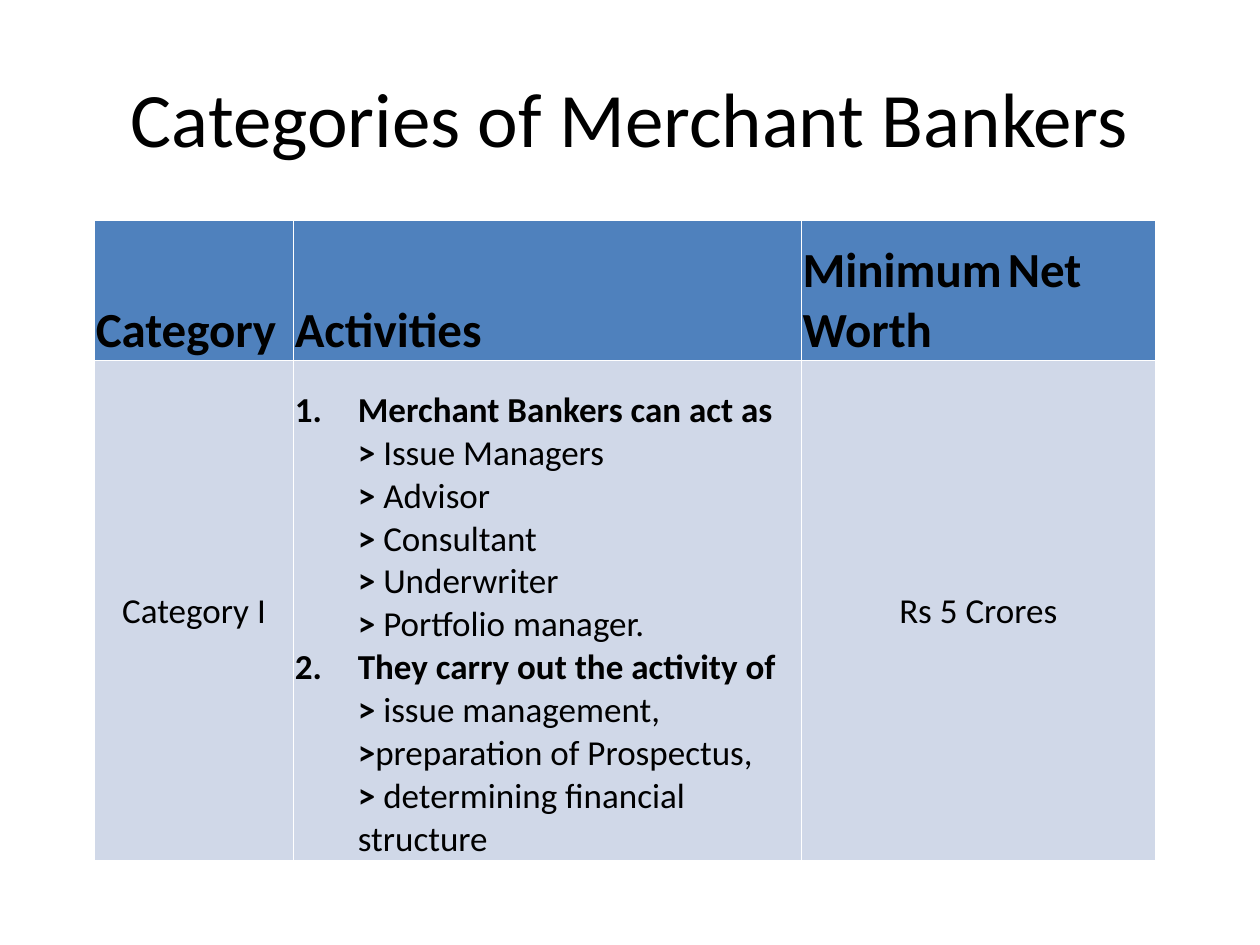
from lxml import etree
from pptx import Presentation
from pptx.dml.color import RGBColor
from pptx.enum.text import MSO_ANCHOR, PP_ALIGN
from pptx.oxml.ns import qn
from pptx.util import Pt

CENTER, LEFT = PP_ALIGN.CENTER, PP_ALIGN.LEFT
MIDDLE, BOTTOM = MSO_ANCHOR.MIDDLE, MSO_ANCHOR.BOTTOM
BLACK = RGBColor(0x00, 0x00, 0x00)
HEADER_BLUE = RGBColor(0x4F, 0x81, 0xBD)
BODY_BLUE = RGBColor(0xD0, 0xD8, 0xE8)
FONT = "Calibri"

TITLE = "Categories of Merchant Bankers"
HEADERS = [
    ["Category"],
    ["Activities"],
    ["Minimum", " ", "Net", " ", "Worth"],
]
CATEGORY, NET_WORTH = "Category I", "Rs 5 Crores"
ACTIVITIES = [
    ("Merchant Bankers can act as", [
        ("> ", "Issue Managers"),
        ("> ", "Advisor"),
        ("> ", "Consultant"),
        ("> ", "Underwriter"),
        ("> ", "Portfolio manager."),
    ]),
    ("They carry out the activity of", [
        ("> ", "issue management,"),
        (">", "preparation of Prospectus,"),
        ("> ", "determining financial structure"),
    ]),
]
COLUMN_WIDTHS = [113.76, 290.16, 202.32]
ROW_HEIGHTS = [79.92, 285.84]
INDENT = 36


def style_paragraph(paragraph, size, align=LEFT):
    paragraph.alignment = align
    font = paragraph.font
    font.name, font.size = FONT, Pt(size)
    font.color.rgb = BLACK


def add_run(paragraph, text, size, bold=False):
    run = paragraph.add_run()
    run.text = text
    run.font.size, run.font.bold = Pt(size), bold
    run.font.name = FONT
    run.font.color.rgb = BLACK


def number_paragraph(paragraph):
    properties = paragraph._p.get_or_add_pPr()
    properties.set("marL", str(Pt(INDENT)))
    properties.set("indent", str(-Pt(INDENT)))
    numbering = etree.Element(qn("a:buAutoNum"), type="arabicPeriod")
    properties.insert(0, numbering)


def style_cell(cell, fill, anchor):
    cell.fill.solid()
    cell.fill.fore_color.rgb = fill
    cell.vertical_anchor = anchor
    cell.margin_left = cell.margin_right = cell.margin_top = Pt(0.75)
    cell.margin_bottom = Pt(0)


def fill_activities(text_frame):
    for index, (heading, items) in enumerate(ACTIVITIES):
        paragraph = text_frame.add_paragraph() if index else text_frame.paragraphs[0]
        style_paragraph(paragraph, 20)
        number_paragraph(paragraph)
        add_run(paragraph, heading, 20, True)
        for marker, item in items:
            paragraph.add_line_break()
            add_run(paragraph, marker, 20, True)
            add_run(paragraph, item, 20)


presentation = Presentation()
presentation.slide_width, presentation.slide_height = Pt(720), Pt(540)
slide = presentation.slides.add_slide(presentation.slide_layouts[6])

title_frame = slide.shapes.add_textbox(Pt(36), Pt(21.6), Pt(648), Pt(90)).text_frame
title_frame.word_wrap = True
title_frame.vertical_anchor = MIDDLE
style_paragraph(title_frame.paragraphs[0], 44, CENTER)
add_run(title_frame.paragraphs[0], TITLE, 44)

table = slide.shapes.add_table(
    len(ROW_HEIGHTS), len(COLUMN_WIDTHS), Pt(54), Pt(126),
    Pt(sum(COLUMN_WIDTHS)), Pt(sum(ROW_HEIGHTS))).table
for column, width in zip(table.columns, COLUMN_WIDTHS):
    column.width = Pt(width)
for row, height in zip(table.rows, ROW_HEIGHTS):
    row.height = Pt(height)

for column, words in enumerate(HEADERS):
    cell = table.cell(0, column)
    style_cell(cell, HEADER_BLUE, BOTTOM)
    paragraph = cell.text_frame.paragraphs[0]
    style_paragraph(paragraph, 28)
    for word in words:
        is_gap = word == " "
        add_run(paragraph, word, 16 if is_gap else 28, not is_gap)

for column, text in ((0, CATEGORY), (2, NET_WORTH)):
    cell = table.cell(1, column)
    style_cell(cell, BODY_BLUE, MIDDLE)
    paragraph = cell.text_frame.paragraphs[0]
    style_paragraph(paragraph, 20, CENTER)
    add_run(paragraph, text, 20)

activities_cell = table.cell(1, 1)
style_cell(activities_cell, BODY_BLUE, BOTTOM)
fill_activities(activities_cell.text_frame)

presentation.save("out.pptx")
